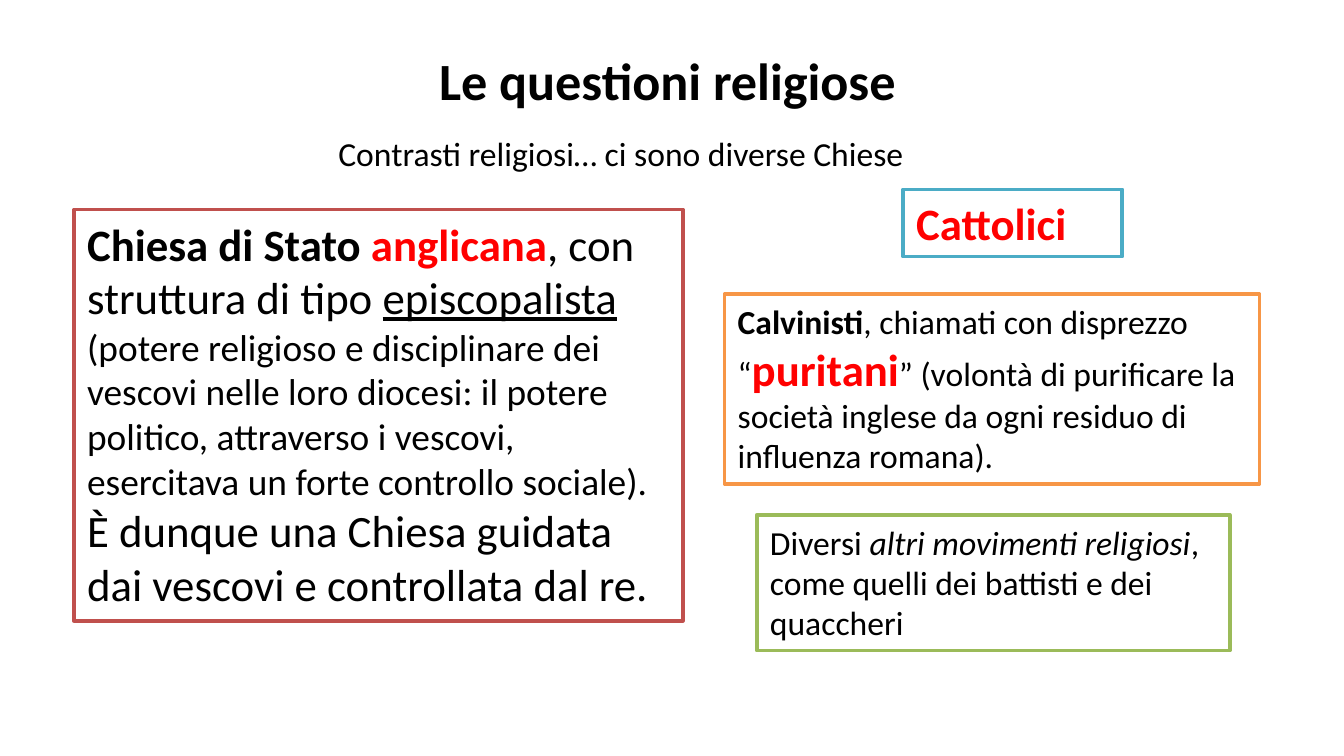
from pptx import Presentation
from pptx.dml.color import RGBColor
from pptx.enum.shapes import MSO_SHAPE as Shape
from pptx.enum.text import MSO_ANCHOR as Anchor, MSO_AUTO_SIZE as AutoSize, PP_ALIGN as Align
from pptx.util import Pt

BLACK, RED, WHITE = "000000", "FF0000", "FFFFFF"


def rgb(hex_color):
    return RGBColor.from_string(hex_color)


def write(frame, paragraphs, anchor=Anchor.TOP, align=Align.LEFT):
    """Each paragraph is a list of (text, size, color, styles) pieces."""
    frame.word_wrap = True
    frame.auto_size = AutoSize.NONE
    frame.vertical_anchor = anchor
    for number, pieces in enumerate(paragraphs):
        paragraph = frame.add_paragraph() if number else frame.paragraphs[0]
        paragraph.alignment = align
        for text, size, color, styles in pieces:
            run = paragraph.add_run()
            run.text = text
            run.font.name = "Calibri"
            run.font.size = Pt(size)
            run.font.color.rgb = rgb(color)
            run.font.bold = "b" in styles
            run.font.italic = "i" in styles
            run.font.underline = "u" in styles


prs = Presentation()
prs.slide_width, prs.slide_height = Pt(720), Pt(405)
slide = prs.slides.add_slide(prs.slide_layouts[5])

# Title
title = slide.shapes.title
title.left, title.top, title.width, title.height = Pt(157.7), Pt(22.3), Pt(399.6), Pt(41)
write(title.text_frame, [[("Le questioni religiose", 28, BLACK, "b")]],
      Anchor.TOP, Align.CENTER)

# Introductory line
intro = slide.shapes.add_textbox(Pt(174.2), Pt(67.7), Pt(360), Pt(28.8))
write(intro.text_frame, [[("Contrasti religiosi… ci sono diverse Chiese", 18, BLACK, "")]])

# One framed box per Church: left, top, width, height, border, paragraphs
churches = [
    (388.1, 157.7, 286.6, 101.5, "F79646", [[
        ("Calvinisti", 18, BLACK, "b"),
        (", chiamati con disprezzo “", 18, BLACK, ""),
        ("puritani", 24, RED, "b"),
        ("” (volontà di purificare la società inglese da ogni residuo "
         "di influenza romana).", 18, BLACK, ""),
    ]]),
    (39.6, 112.3, 326.2, 220.3, "C0504D", [
        [
            ("Chiesa di Stato ", 24, BLACK, "b"),
            ("anglicana", 24, RED, "b"),
            (", con struttura di tipo ", 24, BLACK, ""),
            ("episcopalista", 24, BLACK, "u"),
            (" ", 24, BLACK, ""),
            ("(potere religioso e disciplinare dei vescovi nelle loro diocesi: "
             "il potere politico, attraverso i vescovi, esercitava un forte "
             "controllo sociale).", 20, BLACK, ""),
        ],
        [("È dunque una Chiesa guidata dai vescovi e controllata dal re.", 24, BLACK, "")],
    ]),
    (483.8, 101.5, 117.4, 36, "4BACC6", [[("Cattolici", 24, RED, "b")]]),
    (405.4, 275.8, 253.4, 72.7, "9BBB59", [[
        ("Diversi ", 18, BLACK, ""),
        ("altri movimenti religiosi", 18, BLACK, "i"),
        (", come quelli dei battisti e dei quaccheri", 18, BLACK, ""),
    ]]),
]
for left, top, width, height, border, paragraphs in churches:
    church = slide.shapes.add_shape(Shape.RECTANGLE, Pt(left), Pt(top), Pt(width), Pt(height))
    church.shadow.inherit = False
    church.fill.solid()
    church.fill.fore_color.rgb = rgb(WHITE)
    church.line.color.rgb = rgb(border)
    church.line.width = Pt(2)
    write(church.text_frame, paragraphs)

prs.save("out.pptx")
